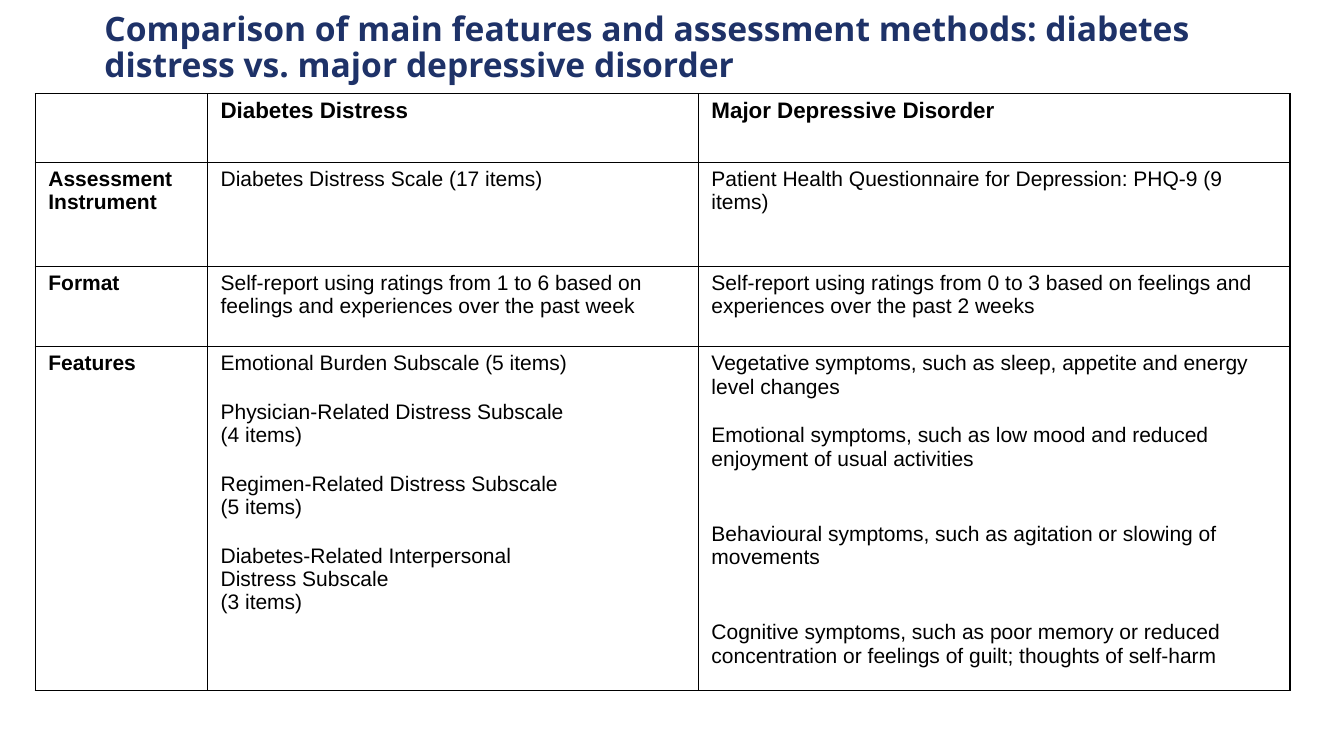
import pptx
import pptx.util
import pptx.dml.color
import pptx.enum.text
import pptx.oxml
import pptx.oxml.ns
from pptx.util import Cm, Pt

GAP = 18
WIDE = 37
COLS = [4.34, 12.37, 14.91]
ROWS = [1.73, 2.62, 2.03, 8.66]

# Each cell is a list of (text, points of space before).
BURDEN = [
    ("Emotional Burden Subscale (5 items)", 0),
    ("Physician-Related Distress Subscale", GAP),
    ("(4 items)", 0),
    ("Regimen-Related Distress Subscale", GAP),
    ("(5 items)", 0),
    ("Diabetes-Related Interpersonal", GAP),
    ("Distress Subscale", 0),
    ("(3 items)", 0),
]
SIGNS = [
    ("Vegetative symptoms, such as sleep, appetite and energy level changes", 0),
    ("Emotional symptoms, such as low mood and reduced enjoyment of usual activities", GAP),
    ("Behavioural symptoms, such as agitation or slowing of movements", WIDE),
    ("Cognitive symptoms, such as poor memory or reduced concentration "
     "or feelings of guilt; thoughts of self-harm", WIDE),
]
CELLS = [
    [[], [("Diabetes Distress", 0)], [("Major Depressive Disorder", 0)]],
    [[("Assessment Instrument", 0)],
     [("Diabetes Distress Scale (17 items)", 0)],
     [("Patient Health Questionnaire for Depression: PHQ-9 (9 items)", 0)]],
    [[("Format", 0)],
     [("Self-report using ratings from 1 to 6 based on feelings and "
       "experiences over the past week", 0)],
     [("Self-report using ratings from 0 to 3 based on feelings and "
       "experiences over the past 2 weeks", 0)]],
    [[("Features", 0)], BURDEN, SIGNS],
]


def color(code):
    return pptx.dml.color.RGBColor.from_string(code)


def write(frame, lines, size=15, font="Arial", fill="000000", bold=False, lead=1.0):
    """Fill a text frame with one paragraph per (text, space before) pair."""
    for i, (text, gap) in enumerate(lines):
        para = frame.add_paragraph() if i else frame.paragraphs[0]
        para.alignment = pptx.enum.text.PP_ALIGN.LEFT
        para.line_spacing = lead
        para.space_before = Pt(gap)
        run = para.add_run()
        run.text = text
        run.font.name = font
        run.font.size = Pt(size)
        run.font.bold = bold
        run.font.color.rgb = color(fill)


def pad(box, side, edge):
    box.margin_left = box.margin_right = Cm(side)
    box.margin_top = box.margin_bottom = Cm(edge)


def border(cell, code="000000", width=1):
    props = cell._tc.get_or_add_tcPr()
    for i, side in enumerate(("lnL", "lnR", "lnT", "lnB")):
        line = pptx.oxml.parse_xml(
            f'<a:{side} {pptx.oxml.ns.nsdecls("a")} w="{Pt(width)}">'
            f'<a:solidFill><a:srgbClr val="{code}"/></a:solidFill></a:{side}>')
        props.insert(i, line)


def add_title(slide, text):
    title = slide.shapes.title
    title.left, title.top = Cm(2.33), Cm(-0.61)
    title.width, title.height = Cm(29.21), Cm(3.68)
    frame = title.text_frame
    frame.word_wrap = True
    frame.auto_size = pptx.enum.text.MSO_AUTO_SIZE.NONE
    frame.vertical_anchor = pptx.enum.text.MSO_ANCHOR.MIDDLE
    pad(frame, 0.3, 0.15)
    write(frame, [(text, 0)], size=24, font="Open Sans", fill="1E3268",
          bold=True, lead=0.9)


def add_grid(slide):
    grid = slide.shapes.add_table(len(ROWS), len(COLS), Cm(0.89), Cm(2.36),
                                  Cm(sum(COLS)), Cm(sum(ROWS))).table
    grid.first_row = grid.horz_banding = False
    for col, width in zip(grid.columns, COLS):
        col.width = Cm(width)
    for row, height in zip(grid.rows, ROWS):
        row.height = Cm(height)
    for r, row in enumerate(CELLS):
        for c, lines in enumerate(row):
            cell = grid.cell(r, c)
            cell.fill.background()
            pad(cell, 0.33, 0.13)
            border(cell)
            write(cell.text_frame, lines, size=15 if r else 16,
                  bold=r == 0 or c == 0)


def main():
    deck = pptx.Presentation()
    deck.slide_width, deck.slide_height = Cm(33.87), Cm(19.05)
    slide = deck.slides.add_slide(deck.slide_layouts[5])
    add_title(slide, "Comparison of main features and assessment methods: "
                     "diabetes distress vs. major depressive disorder")
    add_grid(slide)
    deck.save("out.pptx")


if __name__ == "__main__":
    main()
